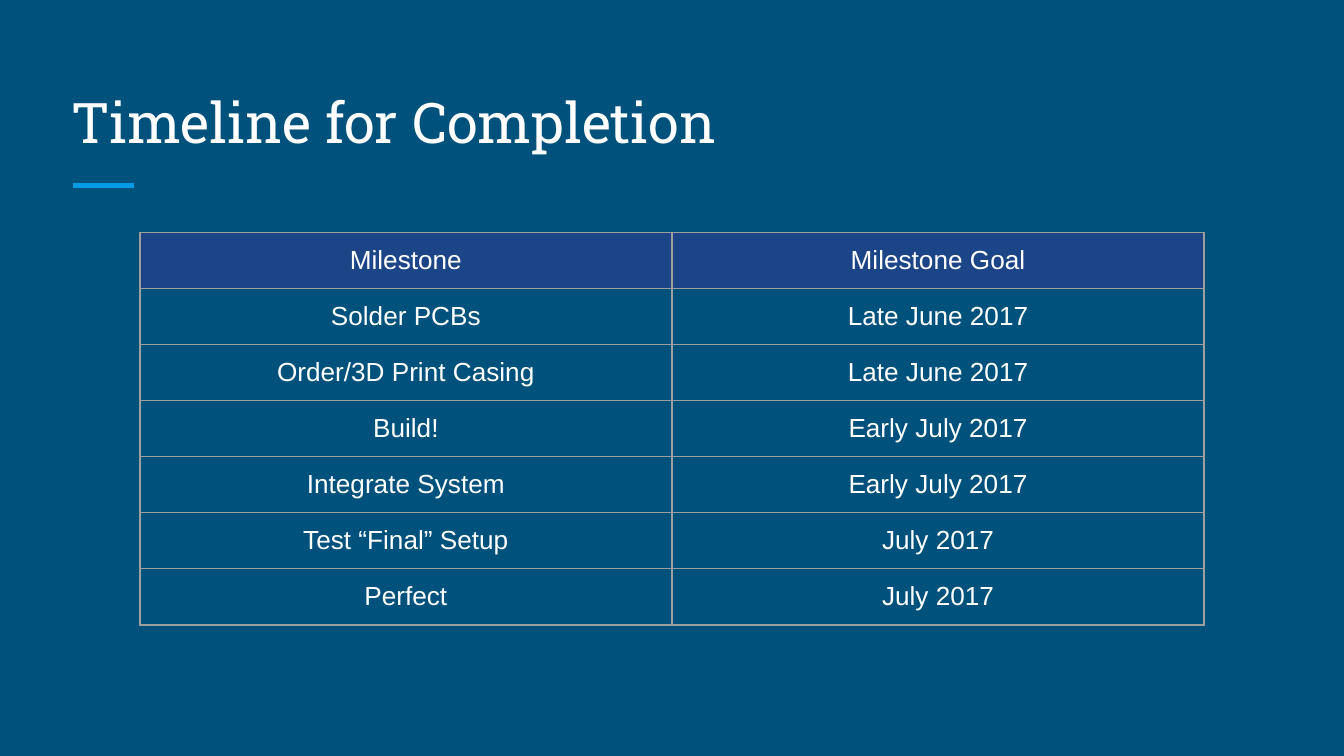
from typing import NamedTuple

from lxml.etree import SubElement
from pptx import Presentation
from pptx.dml.color import RGBColor
from pptx.enum.shapes import MSO_CONNECTOR
from pptx.enum.text import MSO_ANCHOR as Anchor, PP_ALIGN as Align
from pptx.oxml.ns import qn
from pptx.table import _Cell as Cell
from pptx.util import Inches, Pt

NAVY = RGBColor(0x00, 0x51, 0x7C)
HEADER_BLUE = RGBColor(0x1C, 0x45, 0x87)
ACCENT = RGBColor(0x03, 0x9B, 0xE5)
GRID_GRAY = RGBColor(0x9E, 0x9E, 0x9E)
WHITE = RGBColor(0xFF, 0xFF, 0xFF)

SLIDE_WIDTH = Inches(10)
SLIDE_HEIGHT = SLIDE_WIDTH * 9 // 16
COLUMN_WIDTH = Inches(3.96)
TIMELINE_HEIGHT = Inches(2.92)


class Milestone(NamedTuple):
    name: str
    goal: str


MILESTONES = [
    Milestone("Milestone", "Milestone Goal"),
    Milestone("Solder PCBs", "Late June 2017"),
    Milestone("Order/3D Print Casing", "Late June 2017"),
    Milestone("Build!", "Early July 2017"),
    Milestone("Integrate System", "Early July 2017"),
    Milestone("Test “Final” Setup", "July 2017"),
    Milestone("Perfect", "July 2017"),
]


def draw_title(slide, wording: str) -> None:
    title = slide.shapes.add_textbox(Inches(0.43), Inches(0.5), Inches(9.15), Inches(0.75))
    frame = title.text_frame
    frame.word_wrap = True
    frame.vertical_anchor = Anchor.BOTTOM
    frame.margin_left = frame.margin_right = Inches(0.1)
    frame.margin_top = frame.margin_bottom = Inches(0.1)
    frame.text = wording
    font = frame.paragraphs[0].font
    font.name, font.size = "Roboto Slab", Pt(30)
    font.color.rgb = WHITE


def draw_accent(slide) -> None:
    accent = slide.shapes.add_connector(
        MSO_CONNECTOR.STRAIGHT, Inches(0.54), Inches(1.38), Inches(1), Inches(1.38)
    )
    accent.line.color.rgb = ACCENT
    accent.line.width = Pt(3)
    SubElement(accent._element.spPr, qn("a:effectLst"))


def add_borders(cell: Cell) -> None:
    properties = cell._tc.get_or_add_tcPr()
    for side in ("lnL", "lnR", "lnT", "lnB"):
        border = SubElement(properties, qn(f"a:{side}"), w=str(Pt(1)))
        fill = SubElement(border, qn("a:solidFill"))
        SubElement(fill, qn("a:srgbClr"), val=str(GRID_GRAY))


def fill_cell(cell: Cell, wording: str, color: RGBColor) -> None:
    add_borders(cell)
    cell.fill.solid()
    cell.fill.fore_color.rgb = color
    cell.vertical_anchor = Anchor.MIDDLE
    cell.margin_left = cell.margin_right = Inches(0.07)
    cell.margin_top = cell.margin_bottom = Inches(0.07)
    cell.text = wording
    paragraph = cell.text_frame.paragraphs[0]
    paragraph.alignment = Align.CENTER
    paragraph.font.name, paragraph.font.size = "Arial", Pt(14)
    paragraph.font.color.rgb = WHITE


def draw_timeline(slide, milestones: list[Milestone]) -> None:
    columns = len(Milestone._fields)
    timeline = slide.shapes.add_table(
        len(milestones), columns, Inches(1.04), Inches(1.73),
        COLUMN_WIDTH * columns, TIMELINE_HEIGHT,
    ).table
    timeline.first_row = False
    timeline.horz_banding = False
    for row, milestone in enumerate(milestones):
        color = NAVY if row else HEADER_BLUE
        for column, wording in enumerate(milestone):
            fill_cell(timeline.cell(row, column), wording, color)


def main() -> None:
    deck = Presentation()
    deck.slide_width, deck.slide_height = SLIDE_WIDTH, SLIDE_HEIGHT
    slide = deck.slides.add_slide(deck.slide_layouts[6])
    slide.background.fill.solid()
    slide.background.fill.fore_color.rgb = NAVY
    draw_accent(slide)
    draw_title(slide, "Timeline for Completion")
    draw_timeline(slide, MILESTONES)
    deck.save("out.pptx")


if __name__ == "__main__":
    main()
